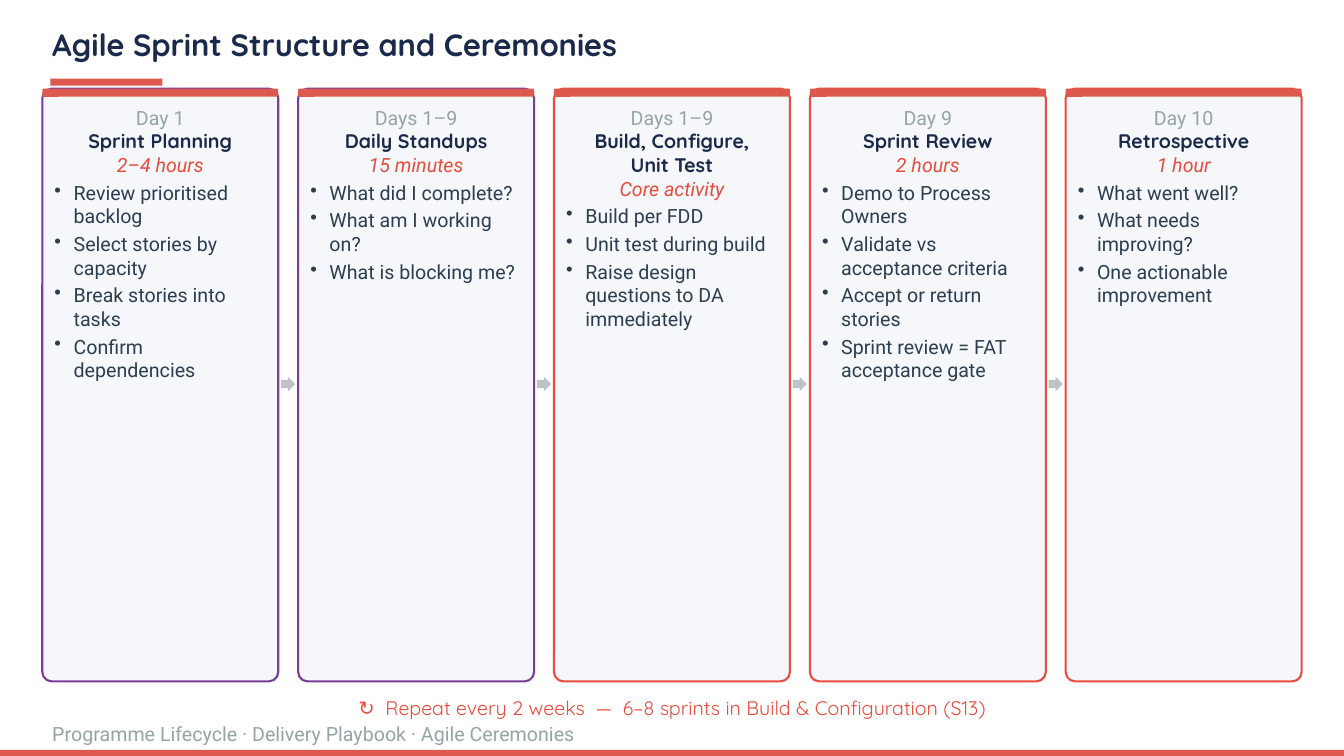
"""Build the Agile sprint structure and ceremonies slide."""
from copy import deepcopy

from lxml import etree
from pptx import Presentation
from pptx.dml.color import RGBColor
from pptx.enum import shapes, text
from pptx.oxml.ns import qn
from pptx.util import Inches, Pt

TITLE = "Agile Sprint Structure and Ceremonies"
CYCLE = "↻  Repeat every 2 weeks  —  6–8 sprints in Build & Configuration (S13)"
FOOTER = "Programme Lifecycle · Delivery Playbook · Agile Ceremonies"
CEREMONIES = [
    ("Day 1", "Sprint Planning", "2–4 hours", "purple",
     ["Review prioritised backlog", "Select stories by capacity",
      "Break stories into tasks", "Confirm dependencies"]),
    ("Days 1–9", "Daily Standups", "15 minutes", "purple",
     ["What did I complete?", "What am I working on?", "What is blocking me?"]),
    ("Days 1–9", "Build, Configure,\nUnit Test", "Core activity", "red",
     ["Build per FDD", "Unit test during build",
      "Raise design questions to DA immediately"]),
    ("Day 9", "Sprint Review", "2 hours", "red",
     ["Demo to Process Owners", "Validate vs acceptance criteria",
      "Accept or return stories", "Sprint review = FAT acceptance gate"]),
    ("Day 10", "Retrospective", "1 hour", "red",
     ["What went well?", "What needs improving?", "One actionable improvement"]),
]
COLORS = {"navy": "1B2A4A", "accent": "DD594D", "red": "E74C3C", "purple": "7D3C98",
          "card": "F5F7FA", "muted": "95A5A6", "body": "2C3E50", "arrow": "BDC3C7"}
HEAD, BODY = "Quicksand", "Roboto"
MARGIN, SPAN = 0.42, 12.49
CARD_TOP, CARD_W, CARD_H, BAND_H = 0.88, 2.34, 5.88, 0.08
TEXT_W, ARROW = 2.18, 0.14
PITCH = (SPAN - CARD_W) / (len(CEREMONIES) - 1)


def rgb(color):
    """Return the named colour."""
    return RGBColor.from_string(COLORS[color])


def add_block(slide, kind, box, fill, line=None, adjust=()):
    """Add a filled preset shape."""
    block = slide.shapes.add_shape(kind, *map(Inches, box))
    block.shadow.inherit = False
    block.fill.solid()
    block.fill.fore_color.rgb = rgb(fill)
    for index, value in enumerate(adjust):
        block.adjustments[index] = value
    if line:
        block.line.color.rgb = rgb(line)
        block.line.width = Pt(1.5)
    else:
        block.line.fill.background()


def add_frame(slide, box, anchor=text.MSO_ANCHOR.TOP, inset=None):
    """Add a wrapping text box and return its frame."""
    frame = slide.shapes.add_textbox(*map(Inches, box)).text_frame
    frame.word_wrap = True
    frame.vertical_anchor = anchor
    if inset is not None:
        frame.margin_left = frame.margin_right = Inches(inset)
        frame.margin_top = frame.margin_bottom = Inches(inset)
    return frame


def write(paragraph, words, font=BODY, size=14, color="body", bold=False,
          italic=False, center=False, bullet=False):
    """Write formatted words into a paragraph."""
    paragraph.text = words
    if center:
        paragraph.alignment = text.PP_ALIGN.CENTER
    if bullet:
        paragraph.space_before = Pt(3)
        properties = paragraph._p.get_or_add_pPr()
        properties.set("marL", str(Inches(0.19)))
        properties.set("indent", str(Inches(-0.19)))
        etree.SubElement(properties, qn("a:buChar")).set("char", "•")
    for run in paragraph.runs:
        run.font.name, run.font.size = font, Pt(size)
        run.font.bold, run.font.italic = bold, italic
        run.font.color.rgb = rgb(color)
    for line_break in paragraph._p.findall(qn("a:br")):
        line_break.append(deepcopy(paragraph.runs[0]._r.rPr))


def add_ceremony(slide, left, day, name, duration, border, steps):
    """Add one ceremony card with its band and text."""
    rounded = shapes.MSO_SHAPE.ROUNDED_RECTANGLE
    add_block(slide, rounded, (left, CARD_TOP, CARD_W, CARD_H), "card", border, [0.04])
    add_block(slide, rounded, (left, CARD_TOP, CARD_W, BAND_H), "accent", adjust=[0.16])
    frame = add_frame(slide, (left + (CARD_W - TEXT_W) / 2, 1.01, TEXT_W, 5.68), inset=0.04)
    write(frame.paragraphs[0], day, color="muted", center=True)
    write(frame.add_paragraph(), name, font=HEAD, color="navy", bold=True, center=True)
    write(frame.add_paragraph(), duration, color="red", italic=True, center=True)
    for step in steps:
        write(frame.add_paragraph(), step, bullet=True)


def main():
    """Build and save the slide."""
    deck = Presentation()
    deck.slide_width, deck.slide_height = Inches(13.33), Inches(7.5)
    slide = deck.slides.add_slide(deck.slide_layouts[6])
    bottom = text.MSO_ANCHOR.BOTTOM

    title = add_frame(slide, (MARGIN, 0.17, 12.5, 0.5), bottom)
    write(title.paragraphs[0], TITLE, font=HEAD, size=22, color="navy", bold=True)

    for index, ceremony in enumerate(CEREMONIES):
        left = MARGIN + index * PITCH
        if index:
            gap = PITCH - CARD_W
            add_block(slide, shapes.MSO_SHAPE.RIGHT_ARROW,
                      (left - (gap + ARROW) / 2, 3.74, ARROW, ARROW),
                      "arrow", adjust=[0.6, 0.5])
        add_ceremony(slide, left, *ceremony)

    cycle = add_frame(slide, (MARGIN, 6.86, 12.5, 0.33))
    write(cycle.paragraphs[0], CYCLE, font=HEAD, color="red", center=True)
    footer = add_frame(slide, (MARGIN, 7.19, 5.56, 0.25), bottom)
    write(footer.paragraphs[0], FOOTER, color="muted")

    for bar in [(0, 7.44, 13.33, 0.06), (0.5, 0.78, 1.11, 0.07)]:
        add_block(slide, shapes.MSO_SHAPE.RECTANGLE, bar, "accent")
    deck.save("out.pptx")


if __name__ == "__main__":
    main()
